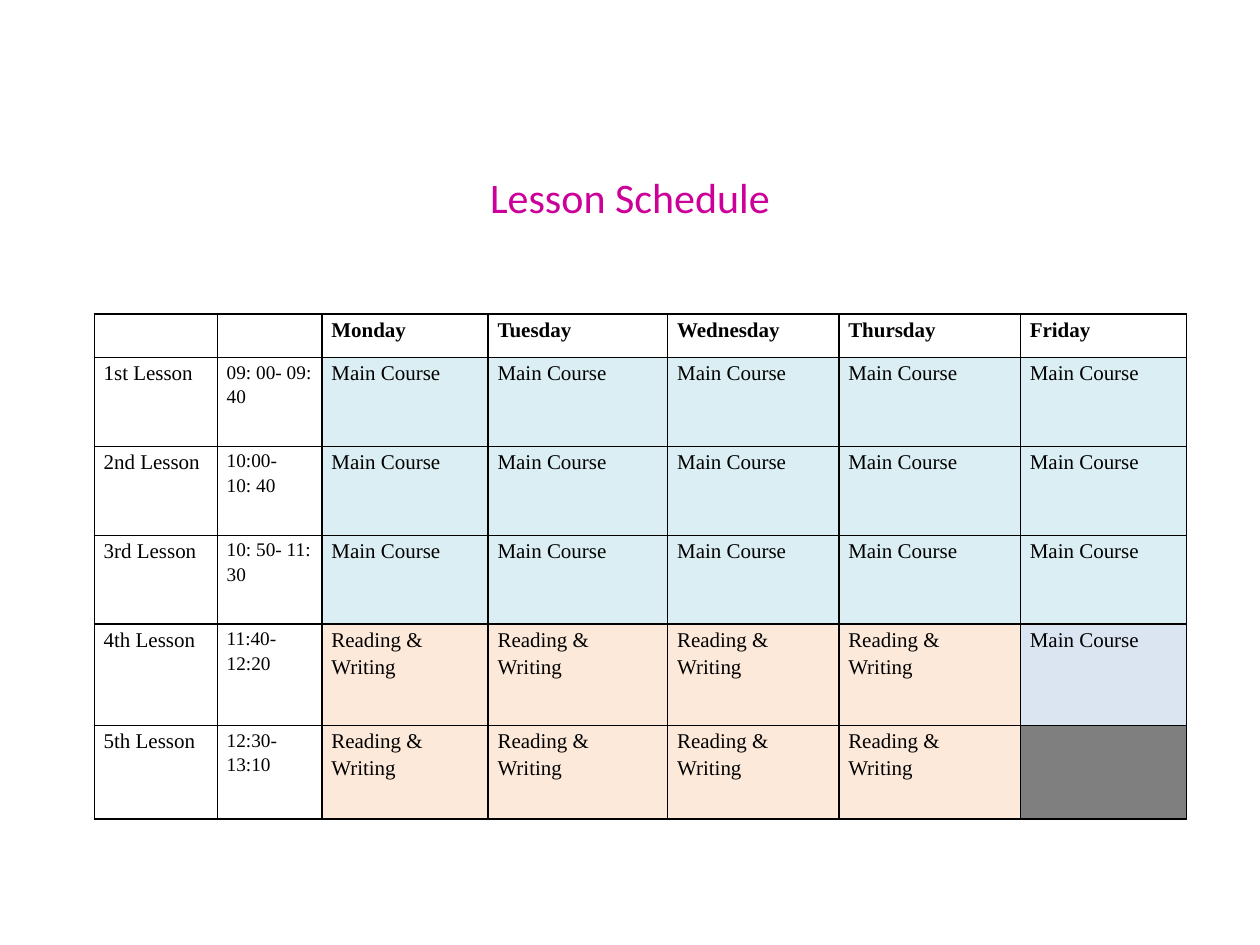
from lxml.etree import SubElement
from pptx import Presentation
from pptx.dml.color import RGBColor
from pptx.enum.text import MSO_ANCHOR, PP_ALIGN
from pptx.oxml.ns import qn
from pptx.util import Cm, Pt

DAYS = ["Monday", "Tuesday", "Wednesday", "Thursday", "Friday"]
MAIN = "Main Course"
READING = "Reading &\nWriting"
READING_WRAPPED = "Reading & Writing"

SCHEDULE = [
    ["", ""] + DAYS,
    ["1st Lesson", "09: 00- 09: 40"] + [MAIN] * 5,
    ["2nd Lesson", "10:00-\n10: 40"] + [MAIN] * 5,
    ["3rd Lesson", "10: 50- 11: 30"] + [MAIN] * 5,
    ["4th Lesson", "11:40-12:20", READING, READING_WRAPPED, READING, READING, MAIN],
    ["5th Lesson", "12:30-13:10"] + [READING] * 4 + [""],
]
COL_WIDTHS = [2.48, 2.11, 3.35, 3.62, 3.45, 3.66, 3.35]
ROW_HEIGHTS = [0.88, 1.79, 1.79, 1.79, 2.05, 1.88]

MAIN_FILL, READING_FILL = "DAEEF3", "FDE9D9"
FRIDAY_FILL, FREE_FILL = "DBE5F1", "7F7F7F"


def color(hex_string):
    return RGBColor.from_string(hex_string)


def lesson_fill(row, col):
    """Fill of a cell, or None for the heading row and the two label columns."""
    if row == 0 or col < 2:
        return None
    if row < 4:
        return MAIN_FILL
    if col < 6:
        return READING_FILL
    return FRIDAY_FILL if row == 4 else FREE_FILL


class SlideBuilder:
    title_font = "Calibri"
    table_font = "Times New Roman"
    title_color = "CC0099"
    ink = "000000"

    def __init__(self, slide):
        self.s = slide

    def title(self, text, left, top, width, height):
        sp = self.s.shapes.title
        sp.left, sp.top, sp.width, sp.height = map(Cm, (left, top, width, height))
        tf = sp.text_frame
        tf.text = text
        tf.vertical_anchor = MSO_ANCHOR.TOP
        p = tf.paragraphs[0]
        p.alignment = PP_ALIGN.CENTER
        self.style(p, self.title_font, 24, self.title_color)

    def style(self, p, name, size, hex_string, bold=False):
        p.font.name, p.font.size, p.font.bold = name, Pt(size), bold
        p.font.color.rgb = color(hex_string)

    def table(self, rows, left, top, widths, heights):
        frame = self.s.shapes.add_table(
            len(rows), len(widths), Cm(left), Cm(top), Cm(sum(widths)), Cm(sum(heights)))
        table = frame.table
        table.first_row = table.horz_banding = False
        for column, width in zip(table.columns, widths):
            column.width = Cm(width)
        for row, height in zip(table.rows, heights):
            row.height = Cm(height)
        for i, texts in enumerate(rows):
            for j, text in enumerate(texts):
                self.cell(table.cell(i, j), text, lesson_fill(i, j),
                          size=11 if j == 1 else 12, bold=i == 0)

    def cell(self, cell, text, fill, size, bold):
        cell.margin_left = cell.margin_right = Cm(0.19)
        cell.margin_top, cell.margin_bottom = Cm(0.02), Cm(0)
        self.borders(cell)
        if fill:
            cell.fill.solid()
            cell.fill.fore_color.rgb = color(fill)
        else:
            cell.fill.background()
        cell.text = text
        for p in cell.text_frame.paragraphs:
            p.line_spacing = 1.15
            self.style(p, self.table_font, size, self.ink, bold)

    def borders(self, cell):
        tc_pr = cell._tc.get_or_add_tcPr()
        for side in ("a:lnL", "a:lnR", "a:lnT", "a:lnB"):
            line = SubElement(tc_pr, qn(side), w=str(Pt(1)))
            SubElement(SubElement(line, qn("a:solidFill")), qn("a:srgbClr"), val=self.ink)


def main():
    prs = Presentation()
    prs.slide_width, prs.slide_height = Cm(25.4), Cm(19.05)
    builder = SlideBuilder(prs.slides.add_slide(prs.slide_layouts[5]))
    builder.title("Lesson Schedule", 7.6, 3.33, 10.2, 1.28)
    builder.table(SCHEDULE, 1.9, 6.33, COL_WIDTHS, ROW_HEIGHTS)
    prs.save("out.pptx")


if __name__ == "__main__":
    main()
